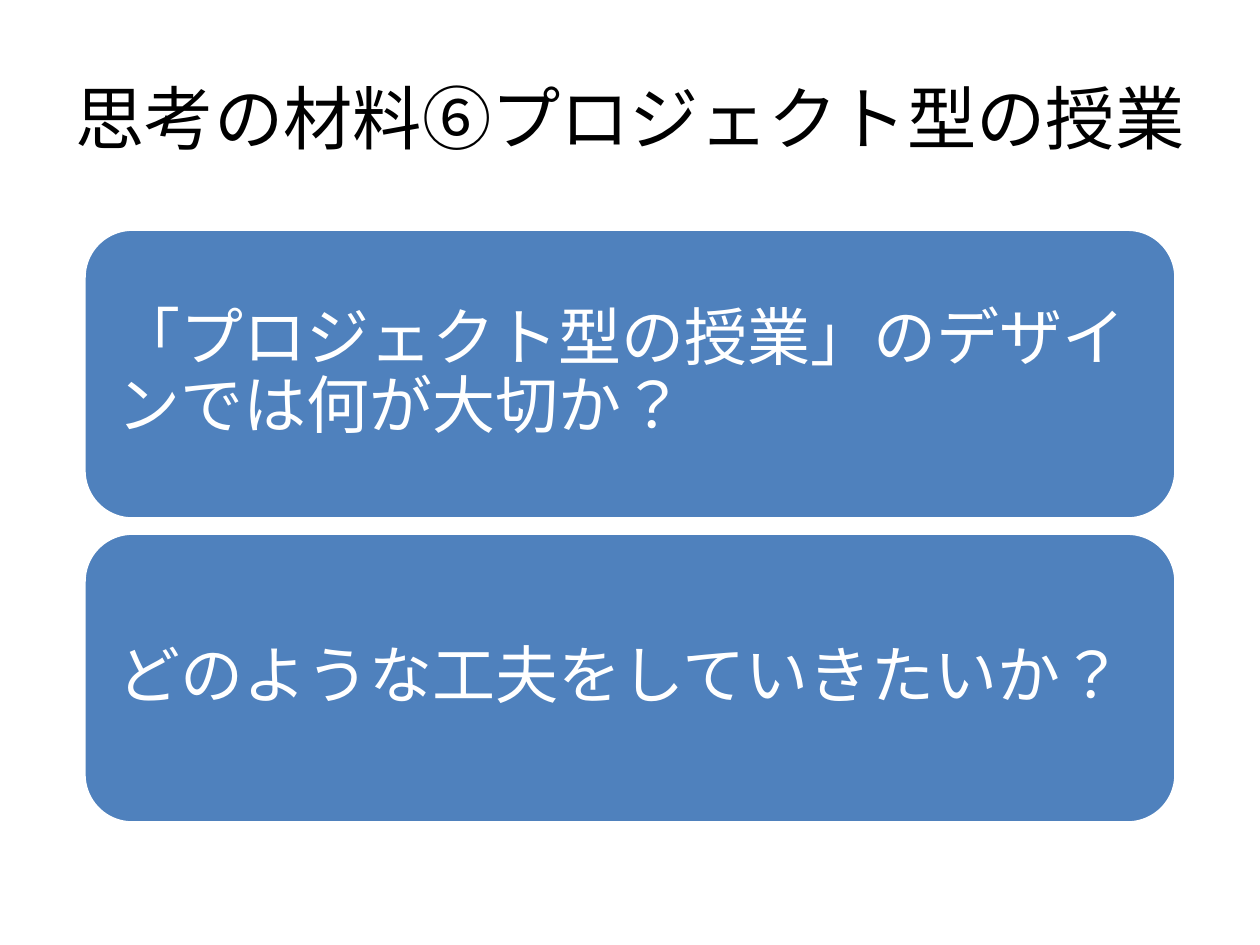
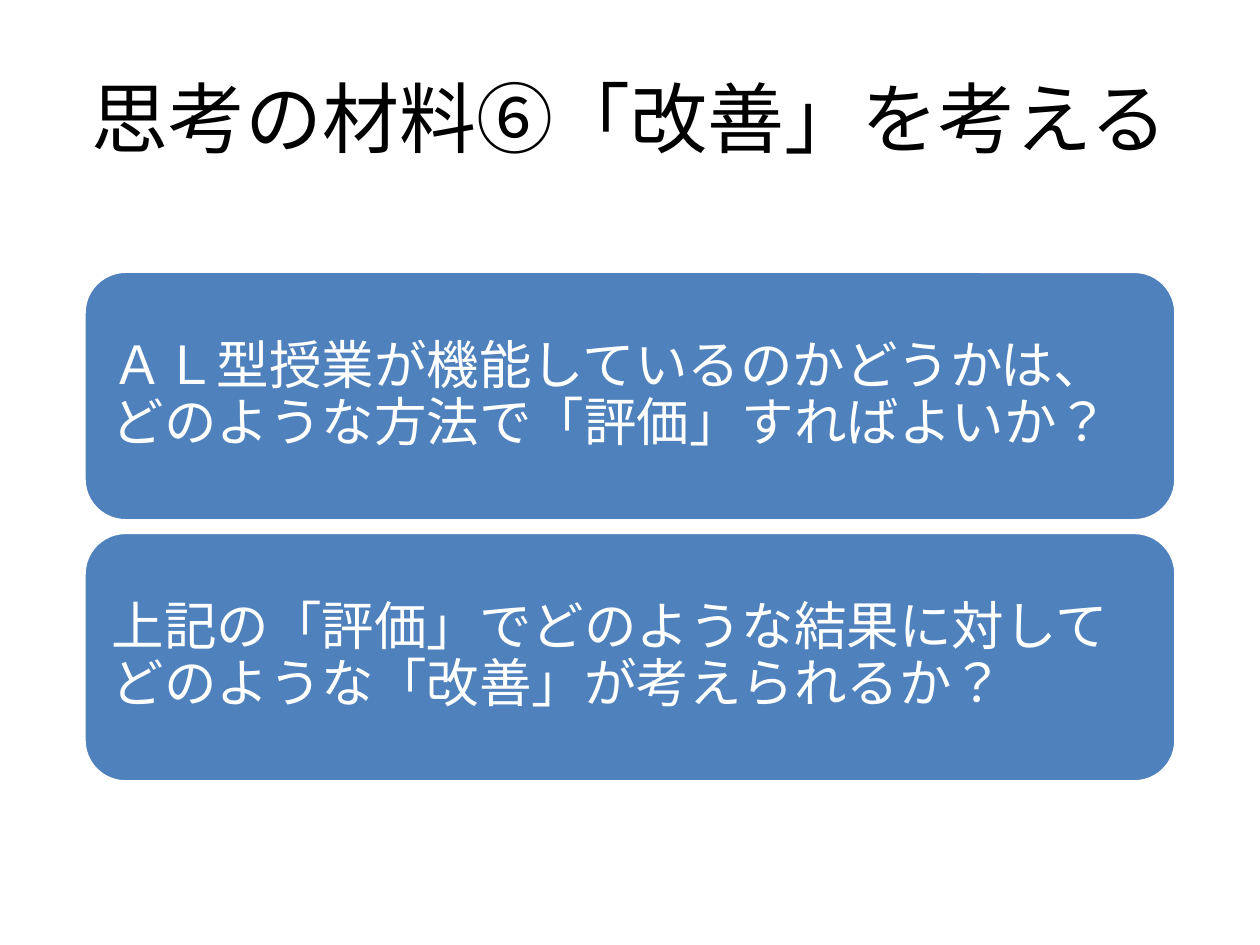
"""Build two discussion slides, each with a title above two question cards."""
from dataclasses import dataclass

from lxml import etree
from pptx import Presentation
from pptx.dml.color import RGBColor
from pptx.enum import lang, shapes, text
from pptx.oxml.ns import qn
from pptx.util import Pt

BLACK = RGBColor(0x00, 0x00, 0x00)
WHITE = RGBColor(0xFF, 0xFF, 0xFF)
BLUE = RGBColor(0x4F, 0x81, 0xBD)
FONT = "Cabin"
SLIDE_W, SLIDE_H = 720, 540
TITLE_TOP, TITLE_H = 21.6, 90
CARD_LEFT, CARD_W = 48, 624
INSET_RATIO = 0.3


@dataclass(frozen=True)
class Title:
    """Slide heading, centred on the slide."""
    words: str
    size: float
    width: float


@dataclass(frozen=True)
class Cards:
    """Column of equal question cards."""
    questions: tuple[str, ...]
    size: float
    top: float
    height: float
    gap: float


SLIDES = (
    (Title("思考の材料⑥プロジェクト型の授業", 39.6, 659),
     Cards(("「プロジェクト型の授業」のデザインでは何が大切か？",
            "どのような工夫をしていきたいか？"), 36, 131, 165.6, 8.1)),
    (Title("思考の材料⑥「改善」を考える", 44, 648),
     Cards(("ＡＬ型授業が機能しているのかどうかは、どのような方法で「評価」すればよいか？",
            "上記の「評価」でどのような結果に対してどのような「改善」が考えられるか？"),
           30, 155, 142.6, 6.6)),
)


def apply(target, values: dict) -> None:
    """Set each named attribute on the target."""
    for name, value in values.items():
        setattr(target, name, value)


def write(sp, words: str, size: float, color: RGBColor, frame: dict, para: dict) -> None:
    """Write one wrapped, vertically centred paragraph into a shape."""
    tf = sp.text_frame
    apply(tf, {"word_wrap": True, "vertical_anchor": text.MSO_ANCHOR.MIDDLE, **frame})
    p = tf.paragraphs[0]
    apply(p, para)
    r = p.add_run()
    r.text = words
    apply(r.font, {"name": FONT, "size": Pt(size),
                   "language_id": lang.MSO_LANGUAGE_ID.JAPANESE})
    r.font.color.rgb = color
    etree.SubElement(r._r.get_or_add_rPr(), qn("a:ea")).set("typeface", FONT)


def draw_title(s, title: Title) -> None:
    """Draw the slide heading."""
    left = (SLIDE_W - title.width) / 2
    sp = s.shapes.add_textbox(Pt(left), Pt(TITLE_TOP), Pt(title.width), Pt(TITLE_H))
    write(sp, title.words, title.size, BLACK, {}, {"alignment": text.PP_ALIGN.CENTER})


def draw_cards(s, cards: Cards) -> None:
    """Draw the question cards from top to bottom."""
    inset = Pt(cards.size * INSET_RATIO)
    frame = {f"margin_{side}": inset for side in ("left", "top", "right", "bottom")}
    para = {"alignment": text.PP_ALIGN.LEFT, "line_spacing": 0.9}
    for i, question in enumerate(cards.questions):
        top = cards.top + i * (cards.height + cards.gap)
        sp = s.shapes.add_shape(shapes.MSO_SHAPE.ROUNDED_RECTANGLE,
                                Pt(CARD_LEFT), Pt(top), Pt(CARD_W), Pt(cards.height))
        sp.shadow.inherit = False
        sp.fill.solid()
        sp.fill.fore_color.rgb = BLUE
        sp.line.color.rgb = WHITE
        sp.line.width = Pt(2)
        write(sp, question, cards.size, WHITE, frame, para)


def main() -> None:
    """Build and save the presentation."""
    prs = Presentation()
    apply(prs, {"slide_width": Pt(SLIDE_W), "slide_height": Pt(SLIDE_H)})
    for title, cards in SLIDES:
        s = prs.slides.add_slide(prs.slide_layouts[6])
        draw_title(s, title)
        draw_cards(s, cards)
    prs.save("out.pptx")


if __name__ == "__main__":
    main()
